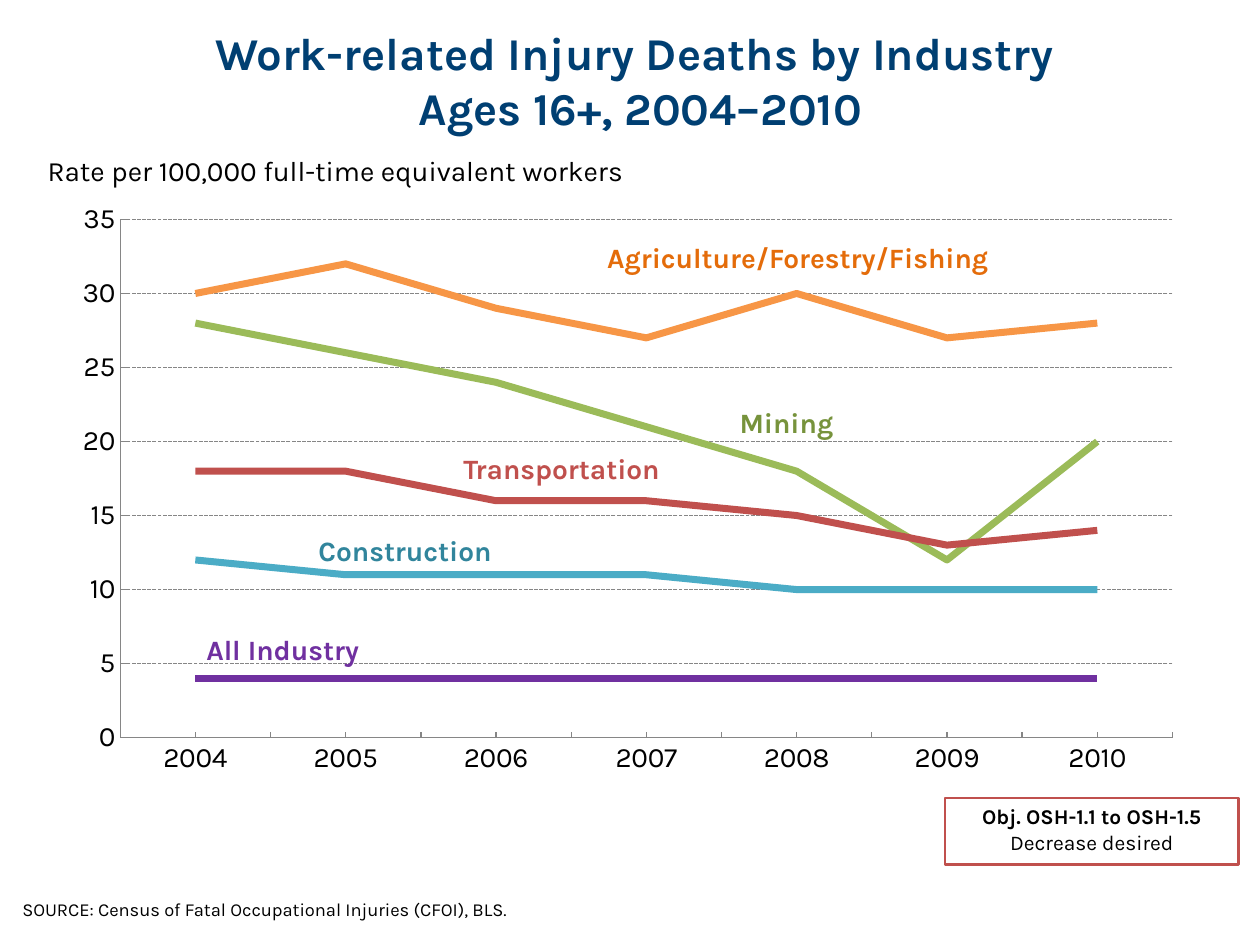
import pptx
import pptx.chart.data
import pptx.dml.color
import pptx.enum.chart
import pptx.enum.dml
import pptx.enum.shapes
import pptx.enum.text
import pptx.util
from lxml import etree

Cm = pptx.util.Cm
Pt = pptx.util.Pt
Align = pptx.enum.text.PP_ALIGN
Anchor = pptx.enum.text.MSO_ANCHOR
Tick = pptx.enum.chart.XL_TICK_MARK


def tint(code):
    return pptx.dml.color.RGBColor.from_string(code)


class Deck:
    face = "Karla"
    ink = "000000"
    gray = "868686"

    def __init__(self, wide, high):
        self.show = pptx.Presentation()
        self.show.slide_width = Cm(wide)
        self.show.slide_height = Cm(high)
        self.slide = self.show.slides.add_slide(self.show.slide_layouts[6])

    def style(self, font, size, code=ink, bold=False):
        font.name = self.face
        font.size = Pt(size)
        font.bold = bold
        font.color.rgb = tint(code)

    def phrase(self, para, words, size, code=ink, bold=False):
        run = para.add_run()
        run.text = words
        self.style(run.font, size, code, bold)

    def label(self, box, lines, size, code=ink, bold=False,
              align=Align.LEFT, anchor=Anchor.TOP):
        frame = self.slide.shapes.add_textbox(*map(Cm, box)).text_frame
        frame.word_wrap = True
        frame.vertical_anchor = anchor
        para = frame.paragraphs[0]
        para.alignment = align
        for count, line in enumerate(lines):
            if count:
                para.add_line_break()
            self.phrase(para, line, size, code, bold)

    def panel(self, box, lines, size, edge):
        shape = self.slide.shapes.add_shape(
            pptx.enum.shapes.MSO_SHAPE.RECTANGLE, *map(Cm, box))
        shape.shadow.inherit = False
        shape.fill.background()
        self.stroke(shape.line, edge, 1.25)
        frame = shape.text_frame
        frame.word_wrap = True
        frame.vertical_anchor = Anchor.TOP
        for count, (words, bold) in enumerate(lines):
            para = frame.add_paragraph() if count else frame.paragraphs[0]
            para.alignment = Align.CENTER
            self.phrase(para, words, size, bold=bold)

    def stroke(self, line, code, width):
        line.color.rgb = tint(code)
        line.width = Pt(width)

    def chart(self, box, cats, rows, plot):
        data = pptx.chart.data.CategoryChartData(number_format="0")
        data.categories = cats
        for count, (code, vals) in enumerate(rows, 1):
            data.add_series(f"Series {count}", vals)
        chart = self.slide.shapes.add_chart(
            pptx.enum.chart.XL_CHART_TYPE.LINE, *map(Cm, box), data).chart
        chart.has_legend = False
        chart.has_title = False
        self.style(chart.font, 16)
        for line, (code, vals) in zip(chart.plots[0].series, rows):
            line.smooth = False
            self.stroke(line.format.line, code, 4)
        chart.plots[0].vary_by_categories = False
        base, side = chart.category_axis, chart.value_axis
        for axis in (base, side):
            self.style(axis.tick_labels.font, 16)
            self.stroke(axis.format.line, self.gray, 0.75)
        base.major_tick_mark = Tick.NONE
        base.minor_tick_mark = Tick.INSIDE
        side.major_tick_mark = Tick.INSIDE
        side.minor_tick_mark = Tick.NONE
        side.minimum_scale, side.maximum_scale, side.major_unit = 0, 35, 5
        side.tick_labels.number_format = "0"
        side.tick_labels.number_format_is_linked = False
        side.has_major_gridlines = True
        grid = side.major_gridlines.format.line
        self.stroke(grid, self.gray, 0.75)
        grid.dash_style = pptx.enum.dml.MSO_LINE.SQUARE_DOT
        self.place(chart, plot)

    def place(self, chart, plot):
        area = chart.plots[0]._element.getparent()
        space = "{" + area.nsmap["c"] + "}"
        for old in area.findall(space + "layout"):
            area.remove(old)
        layout = etree.Element(space + "layout")
        area.insert(0, layout)
        manual = etree.SubElement(layout, space + "manualLayout")
        parts = [("layoutTarget", "inner"), ("xMode", "edge"), ("yMode", "edge")]
        for name, val in parts + list(zip("xywh", plot)):
            etree.SubElement(manual, space + name, val=str(val))


def main():
    deck = Deck(25.4, 19.05)
    deck.label((0.2, 0.84, 25.2, 1.55),
               ["Work-related Injury Deaths by Industry", " Ages 16+, 2004–2010"],
               26, "003F72", True, Align.CENTER, Anchor.MIDDLE)
    rows = [
        ("7030A0", (4, 4, 4, 4, 4, 4, 4)),
        ("9BBB59", (28, 26, 24, 21, 18, 12, 20)),
        ("4BACC6", (12, 11, 11, 11, 10, 10, 10)),
        ("C0504D", (18, 18, 16, 16, 15, 13, 14)),
        ("F79646", (30, 32, 29, 27, 30, 27, 28)),
    ]
    years = [str(year) for year in range(2004, 2011)]
    deck.chart((1.27, 3.25, 23.06, 13.06), years, rows, (0.05, 0.09, 0.92, 0.8))
    deck.label((0.71, 2.97, 14.96, 0.94),
               ["Rate per 100,000 full-time equivalent workers"], 16)
    names = [
        ("Agriculture/Forestry/Fishing", 11.99, 4.72, 9.4, "E46C0A"),
        ("Mining", 14.66, 8.05, 2.97, "77933C"),
        ("Transportation", 9.09, 8.97, 5, "C0504D"),
        ("Construction", 6.17, 10.64, 4.62, "31859C"),
        ("All Industry", 3.91, 12.62, 4.5, "7030A0"),
    ]
    for words, left, top, wide, code in names:
        deck.label((left, top, wide, 0.94), [words], 16, code, True)
    deck.panel((19.05, 16.08, 5.92, 1.35),
               [("Obj. OSH-1.1 to OSH-1.5", True), ("Decrease desired", False)],
               12, "C0504D")
    deck.label((0.2, 17.98, 10.97, 0.71),
               ["SOURCE: Census of Fatal Occupational Injuries (CFOI), BLS."], 10.5)
    deck.show.save("out.pptx")


if __name__ == "__main__":
    main()
